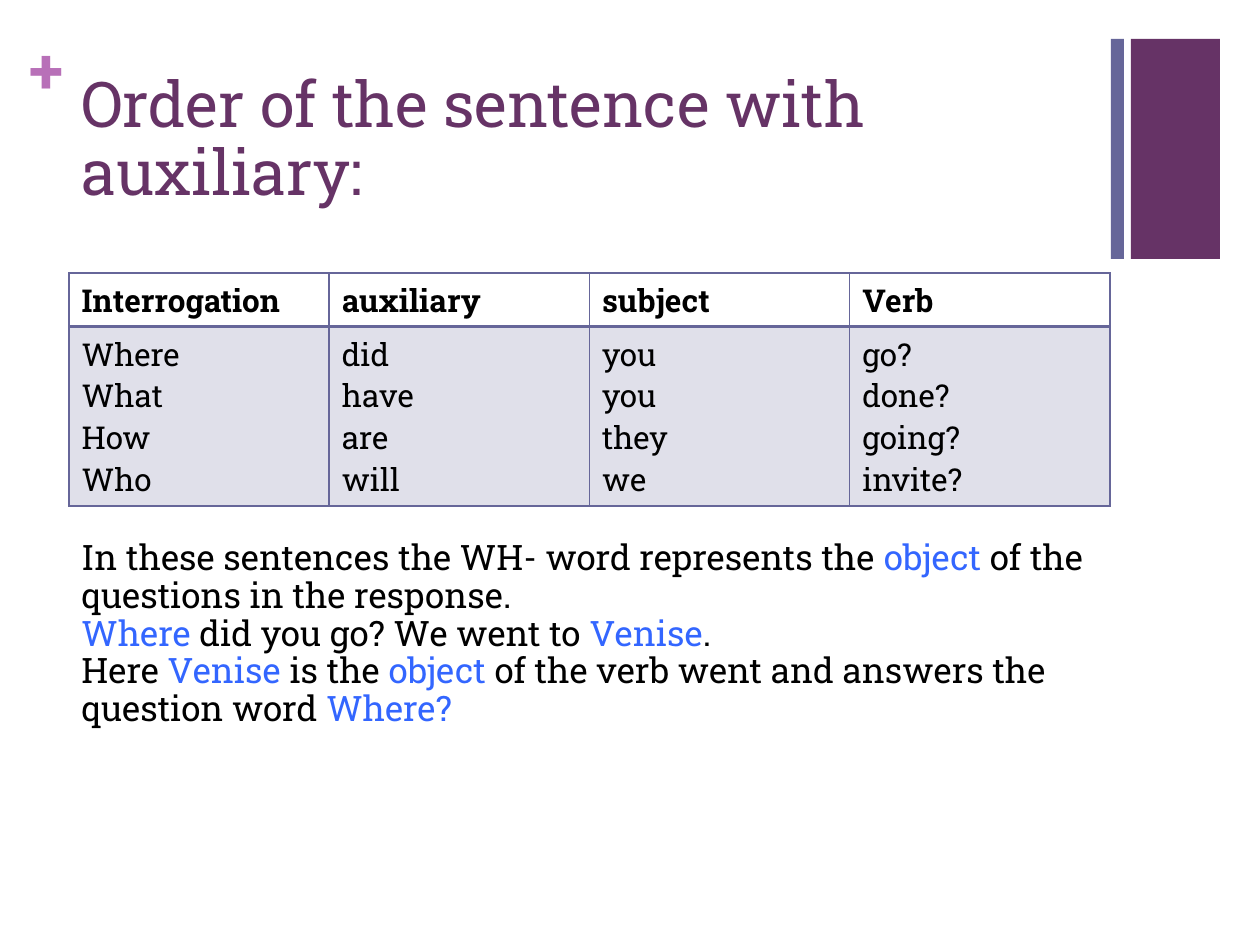
from lxml.etree import SubElement
from pptx import Presentation
from pptx.dml.color import RGBColor
from pptx.enum.shapes import MSO_SHAPE as Shape
from pptx.enum.text import MSO_ANCHOR as Anchor
from pptx.oxml.ns import qn
from pptx.util import Emu, Pt

PX = 914400 // 126
FONT = "Roboto Slab"
PLUM = RGBColor(0x66, 0x33, 0x66)
SLATE = RGBColor(0x66, 0x66, 0x99)
ORCHID = RGBColor(0xB8, 0x70, 0xB8)
BLUE = RGBColor(0x33, 0x66, 0xFF)
BLACK = RGBColor(0, 0, 0)
LEFT, WIDTH = 69, 1041

COLUMNS = {
    "Interrogation": ["Where", "What", "How", "Who"],
    "auxiliary": ["did", "have", "are", "will"],
    "subject": ["you", "you", "they", "we"],
    "Verb": ["go?", "done?", "going?", "invite?"],
}
EXPLANATION = [
    [("In these sentences the WH- word represents the ", BLACK), ("object", BLUE),
     (" of the questions in the response.", BLACK)],
    [("Where", BLUE), (" did you go? We went to ", BLACK), ("Venise", BLUE), (".", BLACK)],
    [("Here ", BLACK), ("Venise", BLUE), (" is the ", BLACK), ("object", BLUE),
     (" of the verb went and answers the question word ", BLACK), ("Where?", BLUE)],
]


def px(*lengths):
    return [Emu(length * PX) for length in lengths]


def write(frame, paragraphs, size, bold=False, spacing=None):
    for index, spans in enumerate(paragraphs):
        para = frame.add_paragraph() if index else frame.paragraphs[0]
        if spacing:
            para.line_spacing = spacing
        for text, color in spans:
            span = para.add_run()
            span.text = text
            span.font.name = FONT
            span.font.size = Pt(size)
            span.font.bold = bold
            span.font.color.rgb = color


def add_bar(page, left, width, color):
    bar = page.shapes.add_shape(Shape.RECTANGLE, *px(left, 39, width, 220))
    bar.shadow.inherit = False
    bar.fill.solid()
    bar.fill.fore_color.rgb = color
    bar.line.fill.background()


def add_text(page, place, paragraphs, size, inset=None, **style):
    frame = page.shapes.add_textbox(*px(*place)).text_frame
    frame.word_wrap = True
    frame.vertical_anchor = Anchor.TOP
    if inset is not None:
        frame.margin_left = frame.margin_right = Emu(inset)
        frame.margin_top = frame.margin_bottom = Emu(inset)
    write(frame, paragraphs, size, **style)


def add_borders(cell, widths):
    properties = cell._tc.get_or_add_tcPr()
    for index, (side, width) in enumerate(widths.items()):
        line = properties.makeelement(qn(f"a:ln{side}"), {"w": str(Pt(width))})
        fill = SubElement(line, qn("a:solidFill"))
        SubElement(fill, qn("a:srgbClr"), val=str(SLATE))
        properties.insert(index, line)


def tint(cell, percent):
    cell.fill.solid()
    cell.fill.fore_color.rgb = SLATE
    color = cell._tc.tcPr.find(".//" + qn("a:srgbClr"))
    SubElement(color, qn("a:alpha"), val=str(percent * 1000))


def add_word_table(page):
    place = px(LEFT, 273, WIDTH, 233)
    table = page.shapes.add_table(2, len(COLUMNS), *place).table
    table.rows[0].height, table.rows[1].height = px(54, 179)
    for index, (heading, words) in enumerate(COLUMNS.items()):
        table.columns[index].width = Emu(WIDTH * PX // len(COLUMNS))
        head, body = table.cell(0, index), table.cell(1, index)
        write(head.text_frame, [[(heading, BLACK)]], 18, bold=True)
        write(body.text_frame, [[(word, BLACK)] for word in words], 18)
        head.fill.background()
        tint(body, 20)
        add_borders(head, {"L": 1, "R": 1, "T": 1, "B": 2})
        add_borders(body, {"L": 1, "R": 1, "T": 2, "B": 1})


def main():
    deck = Presentation()
    deck.slide_width, deck.slide_height = px(1260, 945)
    page = deck.slides.add_slide(deck.slide_layouts[6])
    add_bar(page, 1131, 89, PLUM)
    add_text(page, (30, 31, 37, 77), [[("+", ORCHID)]], 36, inset=0, bold=True)
    add_bar(page, 1111, 13, SLATE)
    add_text(page, (LEFT, 67, WIDTH, 154),
             [[("Order of the sentence with auxiliary:", PLUM)]], 36, spacing=0.9)
    add_word_table(page)
    add_text(page, (LEFT, 534, WIDTH, 224), EXPLANATION, 20, spacing=0.9)
    deck.save("out.pptx")


if __name__ == "__main__":
    main()
